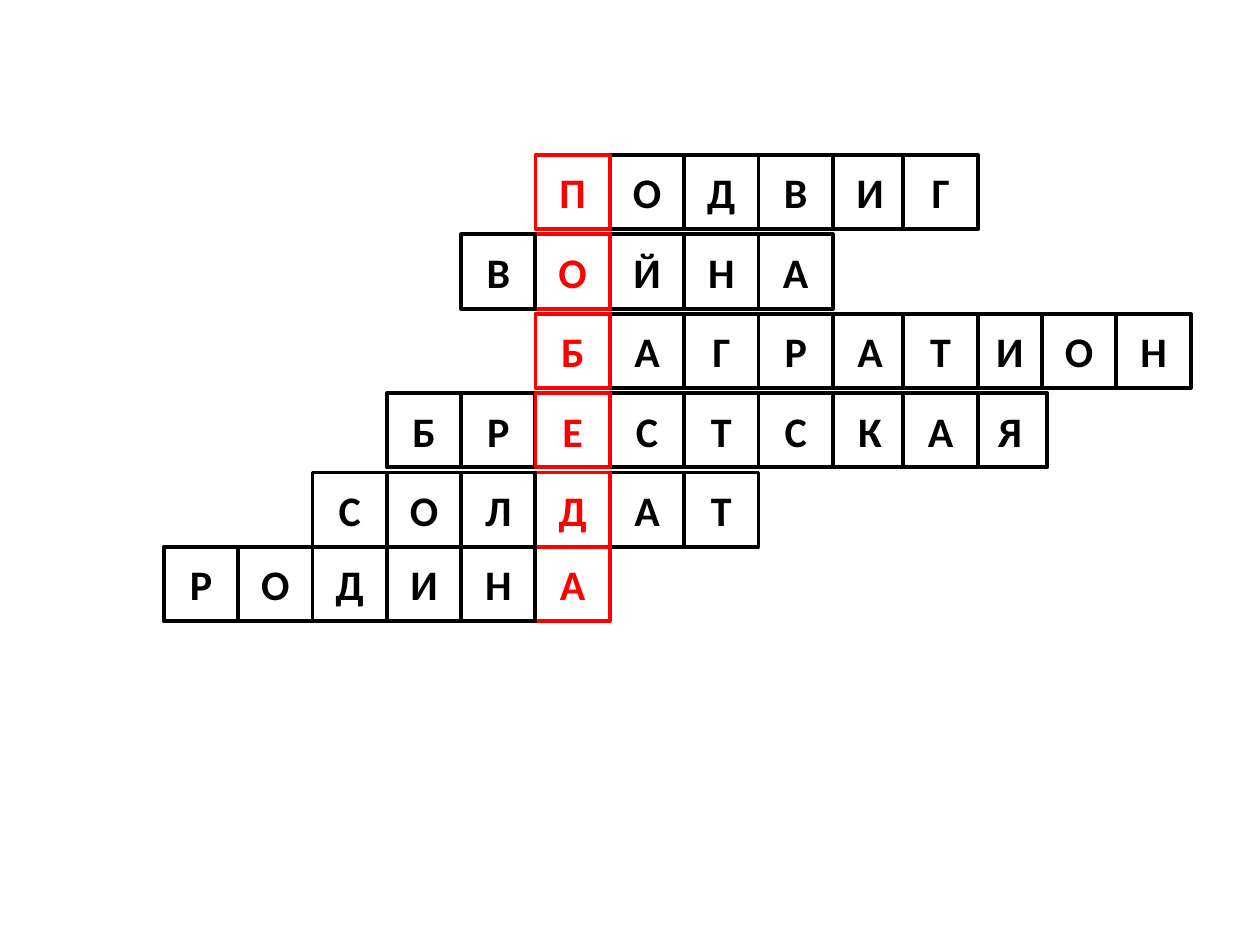
from dataclasses import dataclass

from lxml.etree import SubElement
from pptx import Presentation
from pptx.dml.color import RGBColor
from pptx.enum.shapes import MSO_SHAPE
from pptx.enum.text import MSO_ANCHOR, PP_ALIGN
from pptx.oxml.ns import qn
from pptx.util import Inches, Pt


@dataclass(frozen=True)
class Theme:
    paper: str = "FFFFFF"
    ink: str = "000000"
    key: str = "FF0000"
    font: str = "Calibri"
    letter_size: float = 24
    border: float = 2.25
    letter_outline: float = 0.75


class CrosswordSlide:
    def __init__(self, slide, theme):
        self.slide = slide
        self.theme = theme

    def cell(self, letter, left, top, is_key):
        theme = self.theme
        color = RGBColor.from_string(theme.key if is_key else theme.ink)
        square = self.slide.shapes.add_shape(
            MSO_SHAPE.RECTANGLE, Inches(left), Inches(top), Inches(CELL), Inches(CELL))
        square.shadow.inherit = False
        square.fill.solid()
        square.fill.fore_color.rgb = RGBColor.from_string(theme.paper)
        square.line.color.rgb = color
        square.line.width = Pt(theme.border)

        frame = square.text_frame
        frame.vertical_anchor = MSO_ANCHOR.MIDDLE
        paragraph = frame.paragraphs[0]
        paragraph.alignment = PP_ALIGN.CENTER
        run = paragraph.add_run()
        run.text = letter
        self.outline(run)
        run.font.color.rgb = color
        letter_format = {"name": theme.font, "size": Pt(theme.letter_size), "bold": True}
        for attribute, value in letter_format.items():
            setattr(run.font, attribute, value)

    def outline(self, run):
        properties = run.font._element
        line = SubElement(properties, qn("a:ln"), w=str(Pt(self.theme.letter_outline)))
        fill = SubElement(line, qn("a:solidFill"))
        SubElement(fill, qn("a:srgbClr"), val=self.theme.ink)

    def word(self, word, key_index, top, key_above_left):
        first_column = KEY_COLUMN - key_index
        before = list(range(key_index))
        after = list(range(key_index + 1, len(word)))
        # The tucked column lies beneath both of its neighbours
        after.sort(key=lambda index: first_column + index != TUCKED_COLUMN)
        if key_above_left:
            order = after + before + [key_index]
        else:
            order = after + [key_index] + before
        for index in order:
            self.cell(word[index], COLUMNS[first_column + index], top, index == key_index)


# Grid: ten even columns, then four closer-set ones
CELL = 0.59
COLUMNS = [1.3 + CELL * column for column in range(10)] + [7.17, 7.72, 8.27, 8.86]
KEY_COLUMN = 5
TUCKED_COLUMN = 11
FIRST_ROW = 1.23
ROW_STEP = 0.63

# Each word, the place of its key letter, and whether the key cell covers its left neighbour
WORDS = [
    ("ПОДВИГ", 0, False),
    ("ВОЙНА", 1, False),
    ("БАГРАТИОН", 0, False),
    ("БРЕСТСКАЯ", 2, True),
    ("СОЛДАТ", 3, False),
    ("РОДИНА", 5, False),
]


def main():
    presentation = Presentation()
    presentation.slide_width = Inches(10)
    presentation.slide_height = Inches(7.5)
    slide = presentation.slides.add_slide(presentation.slide_layouts[6])
    crossword = CrosswordSlide(slide, Theme())

    # The last row sits directly against the one above it
    tops = [FIRST_ROW + ROW_STEP * row for row in range(len(WORDS) - 1)]
    tops.append(tops[-1] + CELL)
    for (word, key_index, key_above_left), top in zip(WORDS, tops):
        crossword.word(word, key_index, top, key_above_left)

    presentation.save("out.pptx")


if __name__ == "__main__":
    main()
